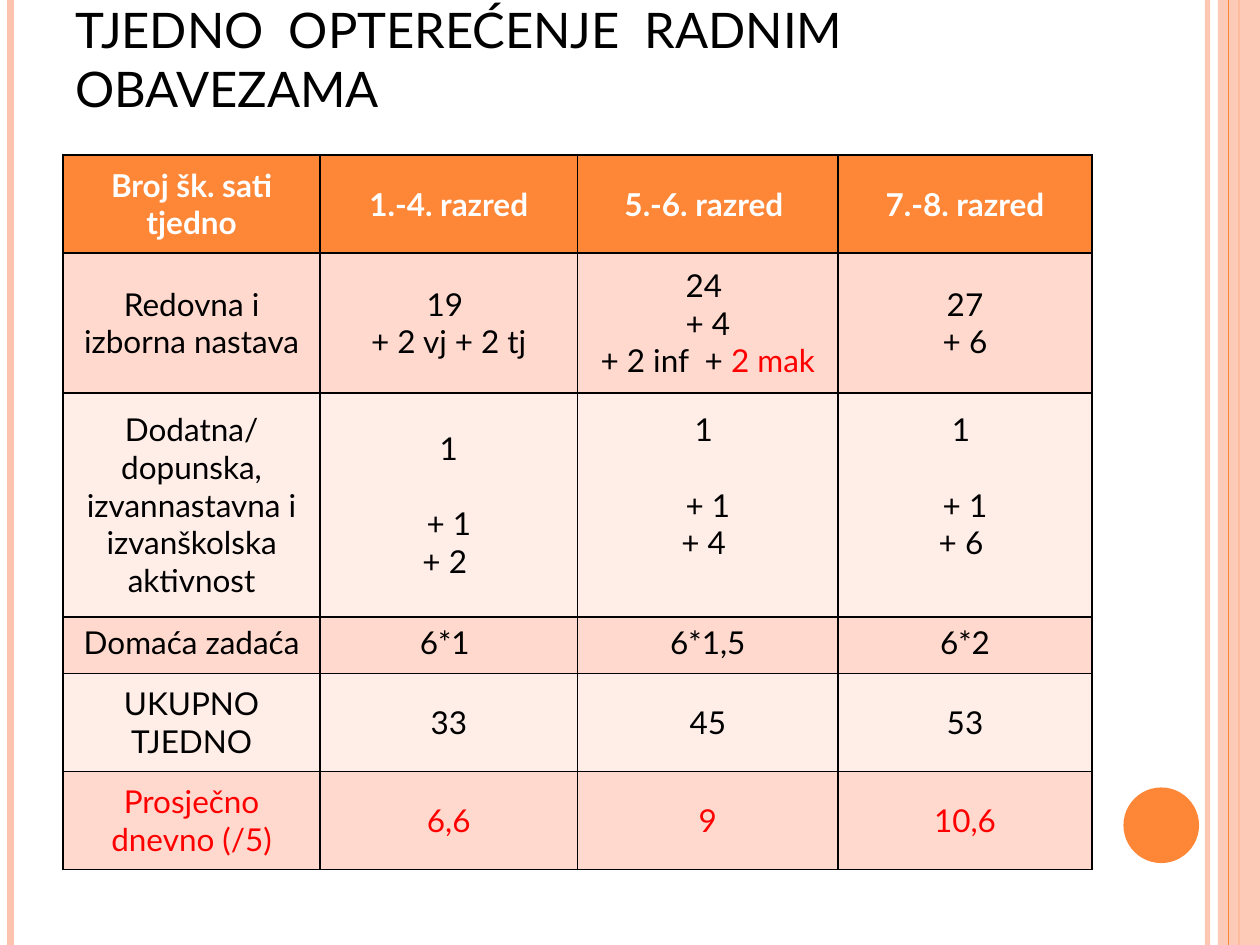
from lxml import etree
from pptx import Presentation
from pptx.dml.color import RGBColor
from pptx.enum.shapes import MSO_CONNECTOR, MSO_SHAPE
from pptx.enum.text import MSO_ANCHOR, PP_ALIGN
from pptx.oxml.ns import qn
from pptx.util import Pt

STRAIGHT = MSO_CONNECTOR.STRAIGHT
RECTANGLE, OVAL = MSO_SHAPE.RECTANGLE, MSO_SHAPE.OVAL
TOP, MIDDLE, BOTTOM = MSO_ANCHOR.TOP, MSO_ANCHOR.MIDDLE, MSO_ANCHOR.BOTTOM
LEFT, CENTER = PP_ALIGN.LEFT, PP_ALIGN.CENTER

# Content: a cell is a list of paragraphs; a tuple holds a black and a red part
TITLE = "TJEDNO  OPTEREĆENJE  RADNIM OBAVEZAMA"
ROWS = [
    [["Broj šk. sati tjedno"], ["1.-4. razred"], ["5.-6. razred "], ["7.-8. razred"]],
    [["Redovna i izborna nastava"], ["19 ", "+ 2 vj + 2 tj"],
     ["24 ", "+ 4", ("+ 2 inf  + ", "2 mak")], ["27", "+ 6"]],
    [["Dodatna/ dopunska, izvannastavna i izvanškolska aktivnost"],
     [" 1 ", "+ 1", "+ 2 "], ["1 ", "+ 1", "+ 4 "], ["1 ", "+ 1", "+ 6 "]],
    [["Domaća zadaća"], ["6*1 "], ["6*1,5"], ["6*2"]],
    [["UKUPNO TJEDNO"], ["33"], ["45"], ["53"]],
    [["Prosječno dnevno (/5)"], ["6,6"], ["9"], ["10,6"]],
]
COLUMN_WIDTHS = [147, 147, 149, 145]
ROW_HEIGHTS = [56, 80, 128, 32.5, 56, 56]
ACTIVITY_ROW, HOMEWORK_ROW, AVERAGE_ROW = 2, 3, 5

# Look
WIDTH, HEIGHT = 720, 540
FONT = "Lato"
ORANGE, PEACH, BLACK, WHITE, RED = "FE8637", "FEC3AE", "000000", "FFFFFF", "FF0000"
BANDS = ["FFEDE8", "FFD9CE"]
TEXT_LINE = 21.6

# Vertical rules: x, colour, width, opacity in percent
RULES = [(690, PEACH, 3, 93), (6, PEACH, 4.5, 100), (708, ORANGE, 1.5, 100)]
FRONT_RULE = (702, ORANGE, 0.75, 100)


def rgb(value):
    return RGBColor.from_string(value)


def set_opacity(properties, percent):
    color = next(properties.iter(qn("a:srgbClr")))
    etree.SubElement(color, qn("a:alpha"), val=str(percent * 1000))


def add_rule(slide, x, color, width, opacity):
    rule = slide.shapes.add_connector(STRAIGHT, Pt(x), Pt(0), Pt(x), Pt(HEIGHT))
    rule.line.color.rgb = rgb(color)
    rule.line.width = Pt(width)
    properties = rule._element.spPr
    if opacity < 100:
        set_opacity(properties, opacity)
    etree.SubElement(properties, qn("a:effectLst"))


def add_plain_shape(slide, kind, left, top, width, height, color):
    shape = slide.shapes.add_shape(kind, Pt(left), Pt(top), Pt(width), Pt(height))
    shape.shadow.inherit = False
    shape.fill.solid()
    shape.fill.fore_color.rgb = rgb(color)
    shape.line.fill.background()
    return shape


def add_run(paragraph, text, color, size, bold=False):
    run = paragraph.add_run()
    run.text = text
    for name, value in {"name": FONT, "size": Pt(size), "bold": bold}.items():
        setattr(run.font, name, value)
    run.font.color.rgb = rgb(color)


def set_borders(cell):
    properties = cell._tc.get_or_add_tcPr()
    for side in ("lnL", "lnR", "lnT", "lnB"):
        line = etree.SubElement(properties, qn("a:" + side), w=str(Pt(1)))
        fill = etree.SubElement(line, qn("a:solidFill"))
        etree.SubElement(fill, qn("a:srgbClr"), val=BLACK)


def fill_cell(cell, content, row, column):
    header = row == 0
    set_borders(cell)
    cell.fill.solid()
    cell.fill.fore_color.rgb = rgb(ORANGE if header else BANDS[row % 2])
    cell.vertical_anchor = TOP if row == HOMEWORK_ROW else MIDDLE
    color = WHITE if header else RED if row == AVERAGE_ROW else BLACK
    # The two right activity cells sit half a line higher
    if row == ACTIVITY_ROW and column >= 2:
        cell.margin_bottom = Pt(3.6 + TEXT_LINE)
    frame = cell.text_frame
    for index, parts in enumerate(content):
        paragraph = frame.add_paragraph() if index else frame.paragraphs[0]
        paragraph.alignment = CENTER
        if row == ACTIVITY_ROW and index == 1:
            paragraph.space_before = Pt(TEXT_LINE)
        if isinstance(parts, str):
            parts = (parts,)
        for text, part_color in zip(parts, (color, RED)):
            add_run(paragraph, text, part_color, 18, header)


def main():
    presentation = Presentation()
    presentation.slide_width, presentation.slide_height = Pt(WIDTH), Pt(HEIGHT)
    slide = presentation.slides.add_slide(presentation.slide_layouts[5])

    # Side decoration
    for rule in RULES:
        add_rule(slide, *rule)
    band = add_plain_shape(slide, RECTANGLE, 696, 0, 24, HEIGHT, PEACH)
    set_opacity(band._element.spPr, 87)
    add_rule(slide, *FRONT_RULE)
    add_plain_shape(slide, OVAL, 642, 450, 43.2, 43.2, ORANGE)

    # Title
    title = slide.shapes.title
    place = {"left": 36, "top": 21, "width": 624, "height": 49.5}
    for name, value in place.items():
        setattr(title, name, Pt(value))
    title.text_frame.word_wrap = True
    title.text_frame.vertical_anchor = BOTTOM
    paragraph = title.text_frame.paragraphs[0]
    paragraph.alignment = LEFT
    add_run(paragraph, TITLE, BLACK, 28)

    # Table
    table = slide.shapes.add_table(
        len(ROWS), len(COLUMN_WIDTHS), Pt(36), Pt(88.5),
        Pt(sum(COLUMN_WIDTHS)), Pt(sum(ROW_HEIGHTS))).table
    for column, width in zip(table.columns, COLUMN_WIDTHS):
        column.width = Pt(width)
    for row, height in zip(table.rows, ROW_HEIGHTS):
        row.height = Pt(height)
    for row, contents in enumerate(ROWS):
        for column, content in enumerate(contents):
            fill_cell(table.cell(row, column), content, row, column)

    presentation.save("out.pptx")


if __name__ == "__main__":
    main()
